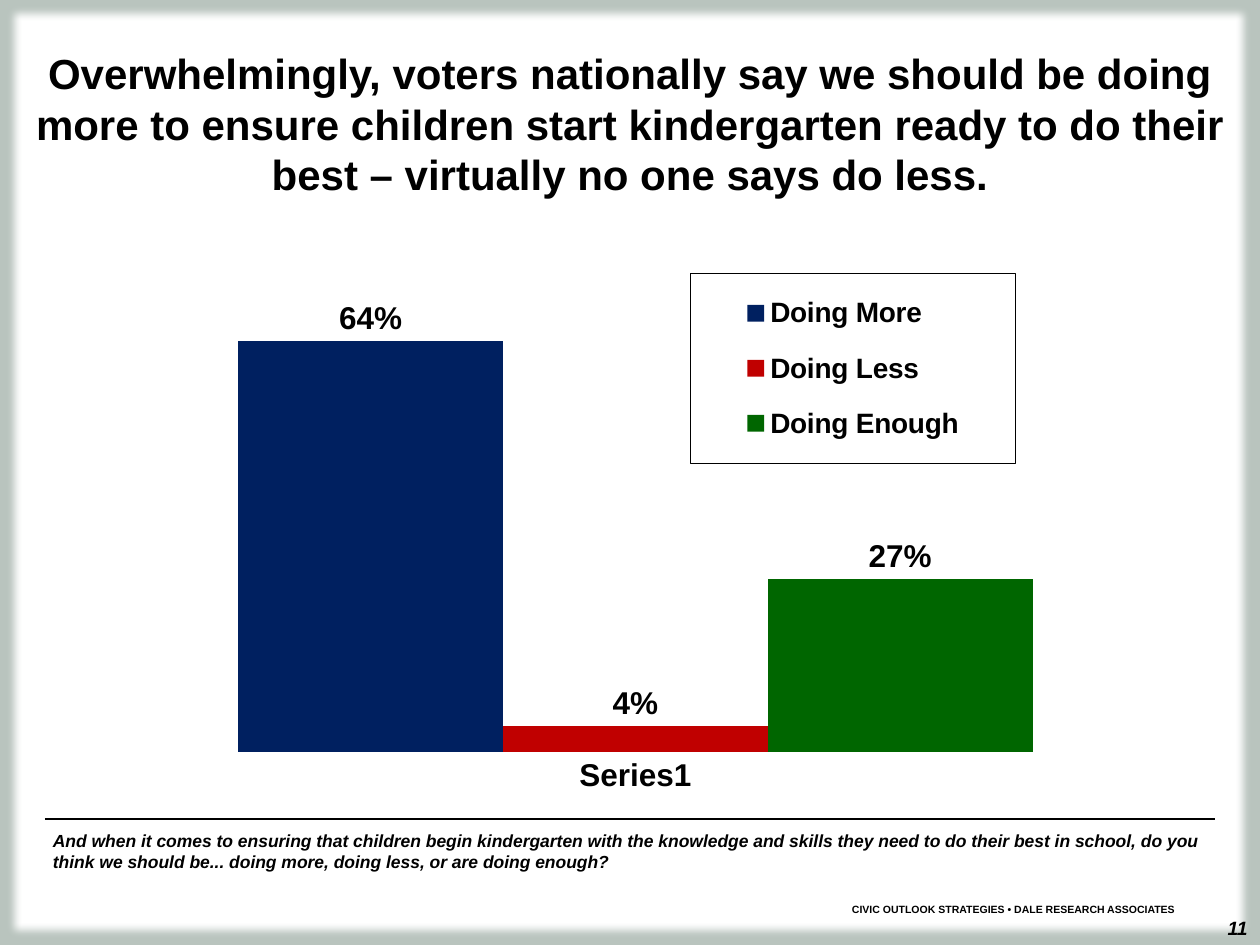
from lxml import etree
from pptx import Presentation
from pptx.chart.data import CategoryChartData
from pptx.dml.color import RGBColor
from pptx.enum.chart import XL_CHART_TYPE, XL_LABEL_POSITION, XL_LEGEND_POSITION, XL_TICK_MARK
from pptx.enum.shapes import MSO_CONNECTOR, MSO_SHAPE
from pptx.enum.text import PP_ALIGN
from pptx.oxml import parse_xml
from pptx.oxml.ns import qn
from pptx.util import Emu, Pt

LEFT, CENTER, RIGHT = PP_ALIGN.LEFT, PP_ALIGN.CENTER, PP_ALIGN.RIGHT
COLUMNS = XL_CHART_TYPE.COLUMN_CLUSTERED
ABOVE_BAR = XL_LABEL_POSITION.OUTSIDE_END
LEGEND_BOTTOM = XL_LEGEND_POSITION.BOTTOM
NO_TICK = XL_TICK_MARK.NONE
STRAIGHT, RECTANGLE = MSO_CONNECTOR.STRAIGHT, MSO_SHAPE.RECTANGLE

EMU_PER_PX = 914400 / 126
FONT = "Arial"
COLORS = {
    "background": "B9C4BE",
    "panel": "FFFFFF",
    "ink": "000000",
    "more": "002060",
    "less": "C00000",
    "enough": "006600",
}
NAMESPACES = (
    'xmlns:c="http://schemas.openxmlformats.org/drawingml/2006/chart" '
    'xmlns:a="http://schemas.openxmlformats.org/drawingml/2006/main"'
)


def px(length):
    return Emu(round(length * EMU_PER_PX))


def color(name):
    return RGBColor.from_string(COLORS[name])


def manual_layout(x, y, width, height, inner=False):
    target = '<c:layoutTarget val="inner"/>' if inner else ""
    return parse_xml(
        f"<c:layout {NAMESPACES}><c:manualLayout>{target}"
        '<c:xMode val="edge"/><c:yMode val="edge"/>'
        f'<c:x val="{x}"/><c:y val="{y}"/><c:w val="{width}"/><c:h val="{height}"/>'
        "</c:manualLayout></c:layout>"
    )


class SlideBuilder:
    """Holds the shared style and the current slide, and adds its elements."""

    def __init__(self, slide):
        self.slide = slide
        backdrop = slide.background.fill
        backdrop.solid()
        backdrop.fore_color.rgb = color("background")

    def style_font(self, font, size, bold=True, italic=False):
        font.name, font.size = FONT, Pt(size)
        font.bold, font.italic = bold, italic
        font.color.rgb = color("ink")

    def soft_panel(self, left, top, width, height, radius):
        panel = self.slide.shapes.add_shape(RECTANGLE, px(left), px(top), px(width), px(height))
        panel.fill.solid()
        panel.fill.fore_color.rgb = color("panel")
        panel.line.fill.background()
        panel.shadow.inherit = False
        effects = panel._element.spPr.find(qn("a:effectLst"))
        etree.SubElement(effects, qn("a:softEdge"), rad=str(Pt(radius)))

    def text(self, left, top, width, height, words, size, align=LEFT, italic=False, inset=True):
        box = self.slide.shapes.add_textbox(px(left), px(top), px(width), px(height))
        frame = box.text_frame
        frame.word_wrap = True
        if not inset:
            frame.margin_left = frame.margin_right = frame.margin_top = frame.margin_bottom = 0
        paragraph = frame.paragraphs[0]
        paragraph.alignment = align
        run = paragraph.add_run()
        run.text = words
        self.style_font(run.font, size, italic=italic)

    def rule(self, left, right, y, weight):
        rule = self.slide.shapes.add_connector(STRAIGHT, px(left), px(y), px(right), px(y))
        rule.line.color.rgb = color("ink")
        rule.line.width = Pt(weight)
        etree.SubElement(rule._element.spPr, qn("a:effectLst"))

    def column_chart(self, left, top, width, height, category, answers):
        data = CategoryChartData(number_format="0%")
        data.categories = [category]
        for answer, share, _ in answers:
            data.add_series(answer, [share])
        chart = self.slide.shapes.add_chart(
            COLUMNS, px(left), px(top), px(width), px(height), data
        ).chart
        chart.has_title = False
        self.style_font(chart.font, 18)

        plot = chart.plots[0]
        plot.gap_width, plot.overlap, plot.vary_by_categories = 75, 0, False
        for series, (_, _, fill) in zip(plot.series, answers):
            series.format.fill.solid()
            series.format.fill.fore_color.rgb = color(fill)
            series.invert_if_negative = False
            labels = series.data_labels
            labels.show_value, labels.position = True, ABOVE_BAR
            labels.number_format, labels.number_format_is_linked = "0%", False
            self.style_font(labels.font, 18)

        shares = chart.value_axis
        shares.minimum_scale, shares.maximum_scale, shares.major_unit = 0, 0.8, 0.2
        shares.has_major_gridlines = shares.visible = False
        groups = chart.category_axis
        groups.major_tick_mark = groups.minor_tick_mark = NO_TICK
        groups.format.line.fill.background()
        self.style_font(groups.tick_labels.font, 18)
        self.place_plot(chart)
        self.framed_legend(chart)

    def place_plot(self, chart):
        area = chart._chartSpace.xpath(".//c:plotArea")[0]
        for layout in area.findall(qn("c:layout")):
            area.remove(layout)
        area.insert(0, manual_layout(0.01, 0.06, 0.99, 0.79, inner=True))

    def framed_legend(self, chart):
        chart.has_legend = True
        chart.legend.position = LEGEND_BOTTOM
        chart.legend.include_in_layout = False
        self.style_font(chart.legend.font, 16)
        legend = chart._chartSpace.xpath(".//c:legend")[0]
        for layout in legend.findall(qn("c:layout")):
            legend.remove(layout)
        overlay = legend.find(qn("c:overlay"))
        overlay.addprevious(manual_layout(0.56, 0.114, 0.324, 0.292))
        overlay.addnext(parse_xml(
            f'<c:spPr {NAMESPACES}><a:noFill/><a:ln w="{Pt(0.75)}"><a:solidFill>'
            f'<a:srgbClr val="{COLORS["ink"]}"/></a:solidFill></a:ln></c:spPr>'
        ))


def main():
    deck = Presentation()
    deck.slide_width, deck.slide_height = px(1260), px(945)
    page = SlideBuilder(deck.slides.add_slide(deck.slide_layouts[6]))

    page.soft_panel(5, 4, 1250, 938, radius=5)
    page.text(1100, 910, 160, 35, "11", 11, RIGHT, italic=True)
    page.text(
        53, 830, 1187, 43,
        "And when it comes to ensuring that children begin kindergarten with the knowledge "
        "and skills they need to do their best in school, do you think we should be... "
        "doing more, doing less, or are doing enough?",
        10, italic=True, inset=False,
    )
    answers = [
        ("Doing More", 0.64, "more"),
        ("Doing Less", 0.04, "less"),
        ("Doing Enough", 0.27, "enough"),
    ]
    page.column_chart(129, 199, 1003, 651, "Series1", answers)
    page.rule(45, 1215, 819, weight=0.75)
    page.text(
        746, 897, 441, 25,
        "CIVIC OUTLOOK STRATEGIES • DALE RESEARCH ASSOCIATES", 6, RIGHT,
    )
    page.text(
        34, 48, 1192, 152,
        "Overwhelmingly, voters nationally say we should be doing more to ensure children "
        "start kindergarten ready to do their best – virtually no one says do less.",
        24, CENTER, inset=False,
    )
    deck.save("out.pptx")


if __name__ == "__main__":
    main()
